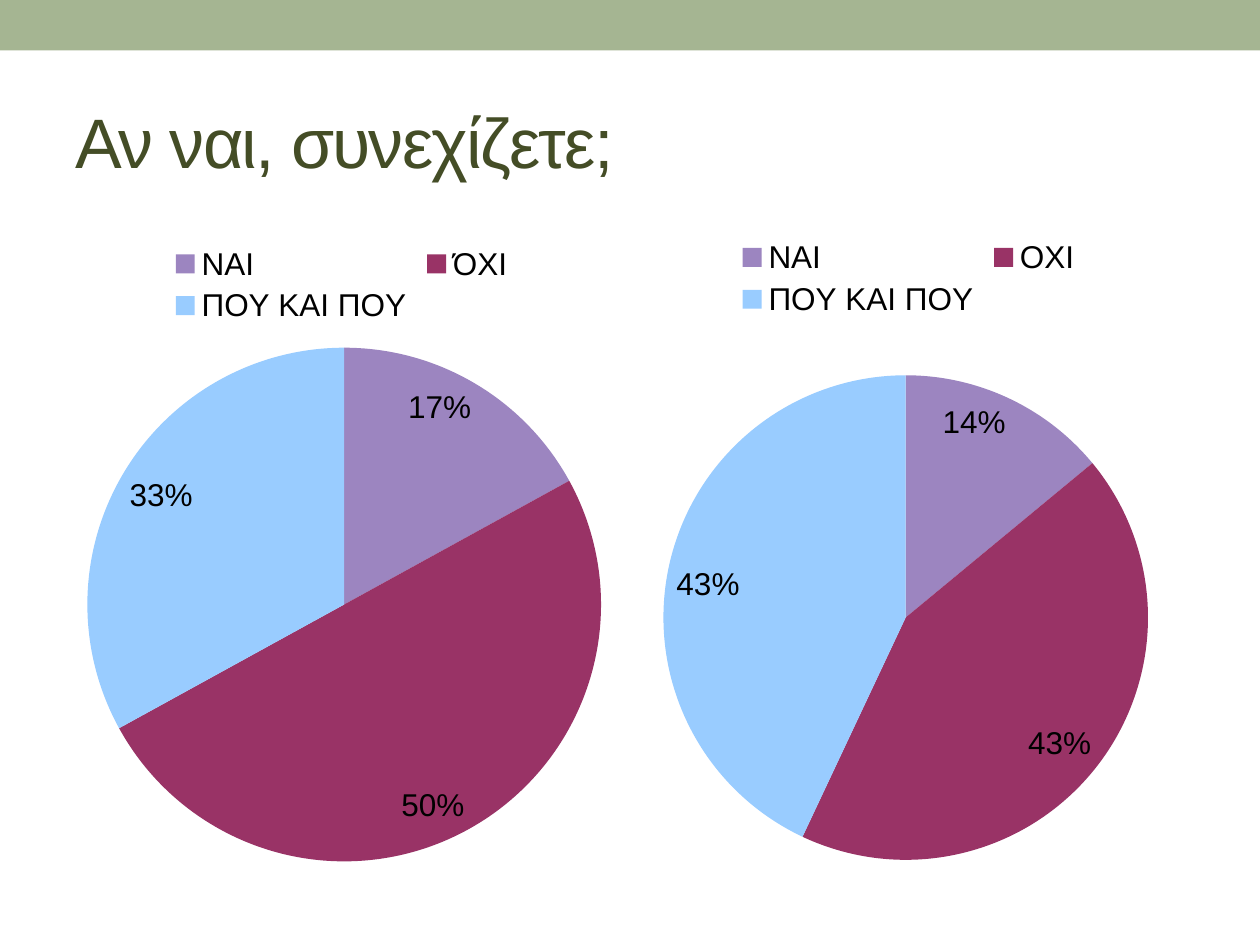
from lxml.etree import SubElement
from pptx import Presentation
from pptx.chart.data import CategoryChartData
from pptx.dml.color import RGBColor
from pptx.enum.chart import XL_CHART_TYPE as ChartType
from pptx.enum.chart import XL_LABEL_POSITION as LabelPos
from pptx.enum.chart import XL_LEGEND_POSITION as LegendPos
from pptx.enum.shapes import MSO_SHAPE as Shape
from pptx.enum.text import MSO_ANCHOR as Anchor
from pptx.oxml.ns import qn
from pptx.util import Cm, Pt

FONT = "Arial"
SAGE = RGBColor(0xA5, 0xB5, 0x92)
OLIVE = RGBColor(0x44, 0x4D, 0x26)
BLACK = RGBColor(0, 0, 0)
SLICES = (RGBColor(0x9C, 0x85, 0xC0), RGBColor(0x99, 0x33, 0x66), RGBColor(0x99, 0xCC, 0xFF))


def set_font(font, size, color):
    """Apply the slide's typeface with a size and colour."""
    font.name = FONT
    font.size = Pt(size)
    font.color.rgb = color


def add_band(s, width, height):
    """Draw the plain band along the top edge."""
    sp = s.shapes.add_shape(Shape.RECTANGLE, 0, 0, width, height)
    sp.shadow.inherit = False
    sp.fill.solid()
    sp.fill.fore_color.rgb = SAGE
    sp.line.fill.background()


def add_title(s, text):
    """Add the tightly spaced heading."""
    sp = s.shapes.add_textbox(Cm(1.27), Cm(1.47), Cm(22.86), Cm(2.74))
    tf = sp.text_frame
    tf.word_wrap = True
    tf.vertical_anchor = Anchor.MIDDLE
    r = tf.paragraphs[0].add_run()
    r.text = text
    set_font(r.font, 40, OLIVE)
    r.font._element.set("spc", "-100")


def set_plot_layout(chart, box):
    """Place the inner plot area by fractions of the chart."""
    plot_area = chart._chartSpace.chart.plotArea
    layout = plot_area.find(qn("c:layout"))
    if layout is None:
        layout = SubElement(plot_area, qn("c:layout"))
        plot_area.insert(0, layout)
    manual = SubElement(layout, qn("c:manualLayout"))
    values = ("inner", "edge", "edge", *box)
    for tag, value in zip(("layoutTarget", "xMode", "yMode", "x", "y", "w", "h"), values):
        SubElement(manual, qn(f"c:{tag}")).set("val", str(value))


def add_pie(s, left, top, categories, values, box):
    """Add a pie chart with a top legend and percentage labels."""
    data = CategoryChartData()
    data.categories = categories
    data.add_series("Series 1", values)
    frame = s.shapes.add_chart(ChartType.PIE, left, top, Cm(11.23), Cm(13.11), data)
    chart = frame.chart
    chart.has_title = False
    set_font(chart.font, 18, BLACK)
    chart.has_legend = True
    chart.legend.position = LegendPos.TOP
    chart.legend.include_in_layout = False
    plot = chart.plots[0]
    plot.vary_by_categories = True
    for i, color in enumerate(SLICES):
        point = plot.series[0].points[i]
        point.format.fill.solid()
        point.format.fill.fore_color.rgb = color
        point.format.line.fill.background()
    plot.has_data_labels = True
    labels = plot.data_labels
    labels.show_value = False
    labels.show_percentage = True
    labels.number_format = "0%"
    labels.number_format_is_linked = False
    labels.position = LabelPos.INSIDE_END
    set_font(labels.font, 18, BLACK)
    set_plot_layout(chart, box)


def main():
    """Build and save the slide."""
    prs = Presentation()
    prs.slide_width, prs.slide_height = Cm(25.4), Cm(19.05)
    s = prs.slides.add_slide(prs.slide_layouts[6])
    add_band(s, prs.slide_width, Cm(1.02))
    add_title(s, "Αν ναι, συνεχίζετε;")
    add_pie(s, Cm(1.27), Cm(4.65), ("ΝΑΙ", "ΌΧΙ", "ΠΟΥ ΚΑΙ ΠΟΥ"), (17, 50, 33),
            (0.04, 0.18, 0.93, 0.79))
    add_pie(s, Cm(12.7), Cm(4.52), ("NAI", "OXI", "ΠΟΥ ΚΑΙ ΠΟΥ"), (14, 43, 43),
            (0.06, 0.23, 0.87, 0.75))
    prs.save("out.pptx")


if __name__ == "__main__":
    main()
